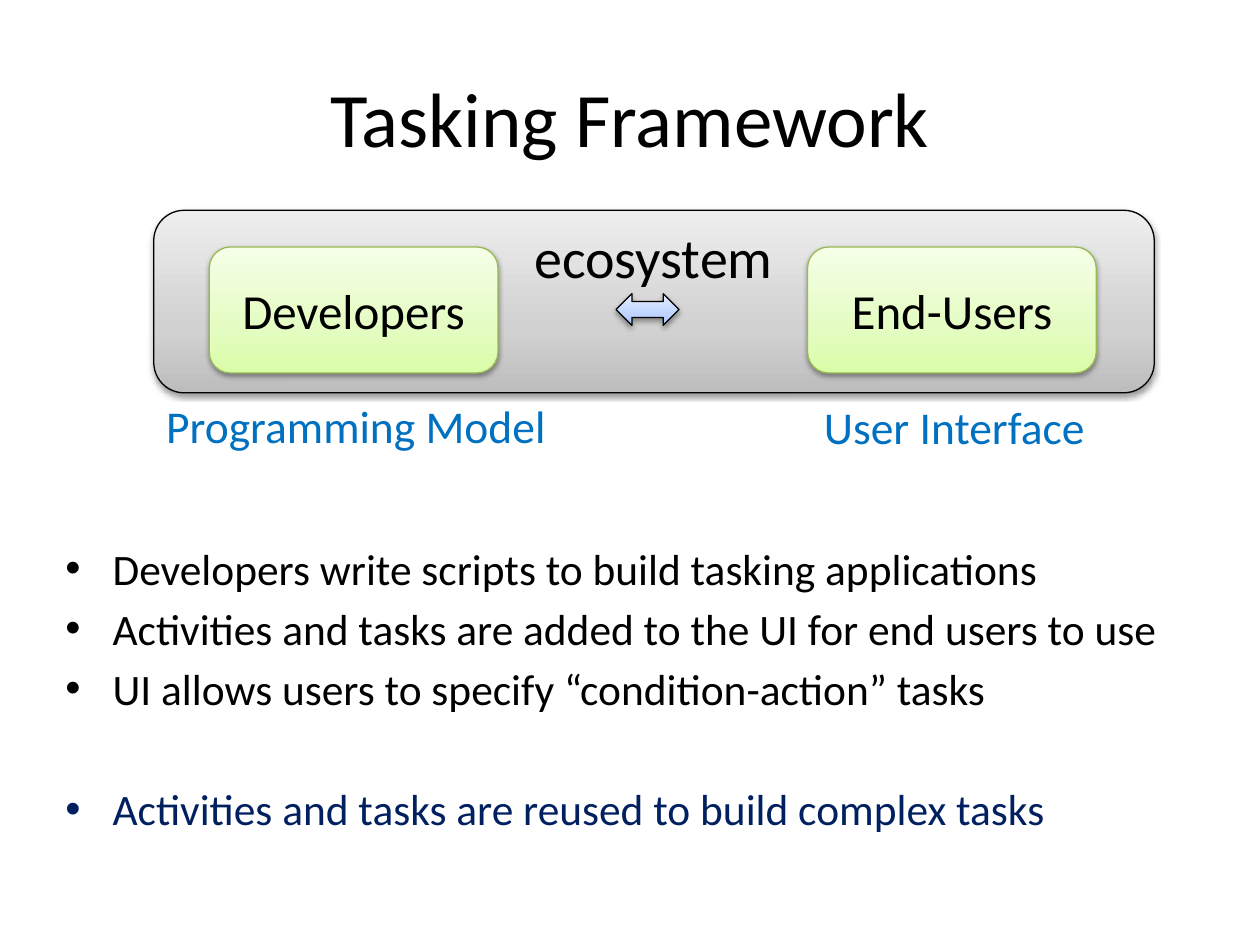
"""Build the Tasking Framework slide: an ecosystem diagram above a bulleted summary."""
import copy
import dataclasses

import lxml.etree
import pptx
import pptx.dml.color
import pptx.enum.shapes
import pptx.enum.text
import pptx.oxml
import pptx.oxml.ns
import pptx.util

Cm = pptx.util.Cm
Pt = pptx.util.Pt
RGB = pptx.dml.color.RGBColor.from_string
SHAPE = pptx.enum.shapes.MSO_SHAPE
ALIGN = pptx.enum.text.PP_ALIGN
ANCHOR = pptx.enum.text.MSO_ANCHOR
qn = pptx.oxml.ns.qn


@dataclasses.dataclass(frozen=True)
class Theme:
    font: str = "Calibri"
    text: str = "000000"
    caption: str = "0070C0"
    conclusion: str = "002060"
    outline: str = "000000"
    role_outline: str = "98B955"
    grey: tuple = ("BDBDBD", "D1D1D1", "EEEEEE")
    green: tuple = ("DAFDA7", "E4FCC2", "F5FFE7")
    blue: tuple = ("A4C4FF", "BFD4FF", "E6EEFF")
    stops: tuple = (0, 0.35, 1)
    title_size: float = 44
    ecosystem_size: float = 32
    role_size: float = 28
    caption_size: float = 26
    bullet_size: float = 24.8


theme = Theme()
SHADOW = (
    '<a:outerShdw xmlns:a="http://schemas.openxmlformats.org/drawingml/2006/main" '
    'blurRad="40000" dist="20000" dir="5400000" rotWithShape="0">'
    '<a:srgbClr val="000000"><a:alpha val="38000"/></a:srgbClr></a:outerShdw>'
)


def add_glossy(preset, left, top, width, height, gradient, outline):
    glossy = slide.shapes.add_shape(preset, Cm(left), Cm(top), Cm(width), Cm(height))
    glossy.fill.gradient()
    glossy.fill.gradient_angle = 90
    stop_list = glossy._element.spPr.find(".//" + qn("a:gsLst"))
    stop_list.insert(1, copy.deepcopy(stop_list[0]))
    for stop, position, color in zip(glossy.fill.gradient_stops, theme.stops, gradient):
        stop.position = position
        stop.color.rgb = RGB(color)
    glossy.line.color.rgb = RGB(outline)
    glossy.line.width = Pt(0.75)
    glossy.shadow.inherit = False
    effects = glossy._element.spPr.find(qn("a:effectLst"))
    effects.append(pptx.oxml.parse_xml(SHADOW))
    return glossy


def write(paragraph, text, size, color, align=ALIGN.LEFT):
    paragraph.text = text
    paragraph.alignment = align
    paragraph.font.name = theme.font
    paragraph.font.size = Pt(size)
    paragraph.font.color.rgb = RGB(color)


deck = pptx.Presentation()
deck.slide_width = Cm(25.4)
deck.slide_height = Cm(19.05)
slide = deck.slides.add_slide(deck.slide_layouts[5])

title = slide.shapes.title
title.left, title.top, title.width, title.height = Cm(1.27), Cm(0.76), Cm(22.86), Cm(3.18)
title.text_frame.vertical_anchor = ANCHOR.MIDDLE
write(title.text_frame.paragraphs[0], "Tasking Framework", theme.title_size, theme.text, ALIGN.CENTER)

add_glossy(SHAPE.ROUNDED_RECTANGLE, 3.1, 4.24, 20.17, 3.68, theme.grey, theme.outline)

for role_name, left in (("Developers", 4.22), ("End-Users", 16.28)):
    role = add_glossy(SHAPE.ROUNDED_RECTANGLE, left, 4.98, 5.82, 2.54, theme.green, theme.role_outline)
    role.text_frame.vertical_anchor = ANCHOR.MIDDLE
    write(role.text_frame.paragraphs[0], role_name, theme.role_size, theme.text, ALIGN.CENTER)

add_glossy(SHAPE.LEFT_RIGHT_ARROW, 12.42, 5.92, 1.27, 0.64, theme.blue, theme.outline)

labels = (
    ("ecosystem", 10.52, 4.37, 5.36, 1.63, theme.ecosystem_size, theme.text),
    ("Programming Model", 3.1, 7.9, 8.23, 1.37, theme.caption_size, theme.caption),
    ("User Interface", 16.36, 7.92, 5.82, 1.37, theme.caption_size, theme.caption),
)
for wording, left, top, width, height, size, color in labels:
    label = slide.shapes.add_textbox(Cm(left), Cm(top), Cm(width), Cm(height))
    label.text_frame.word_wrap = False
    write(label.text_frame.paragraphs[0], wording, size, color)

summary = slide.shapes.add_textbox(Cm(1.07), Cm(10.8), Cm(22.86), Cm(6.35)).text_frame
summary.word_wrap = True
points = (
    ("Developers write scripts to build tasking applications", theme.text, 4.5),
    ("Activities and tasks are added to the UI for end users to use", theme.text, 4.5),
    ("UI allows users to specify “condition-action” tasks", theme.text, 4.5),
    ("Activities and tasks are reused to build complex tasks", theme.conclusion, 39),
)
for index, (wording, color, gap) in enumerate(points):
    point = summary.add_paragraph() if index else summary.paragraphs[0]
    write(point, wording, theme.bullet_size, color)
    point.space_before = Pt(gap)
    properties = point._p.get_or_add_pPr()
    properties.set("marL", str(Cm(0.95)))
    properties.set("indent", str(-Cm(0.95)))
    bullet_font = lxml.etree.Element(qn("a:buFont"), typeface="Arial")
    bullet = lxml.etree.Element(qn("a:buChar"), char="•")
    properties.find(qn("a:spcBef")).addnext(bullet_font)
    bullet_font.addnext(bullet)

deck.save("out.pptx")
